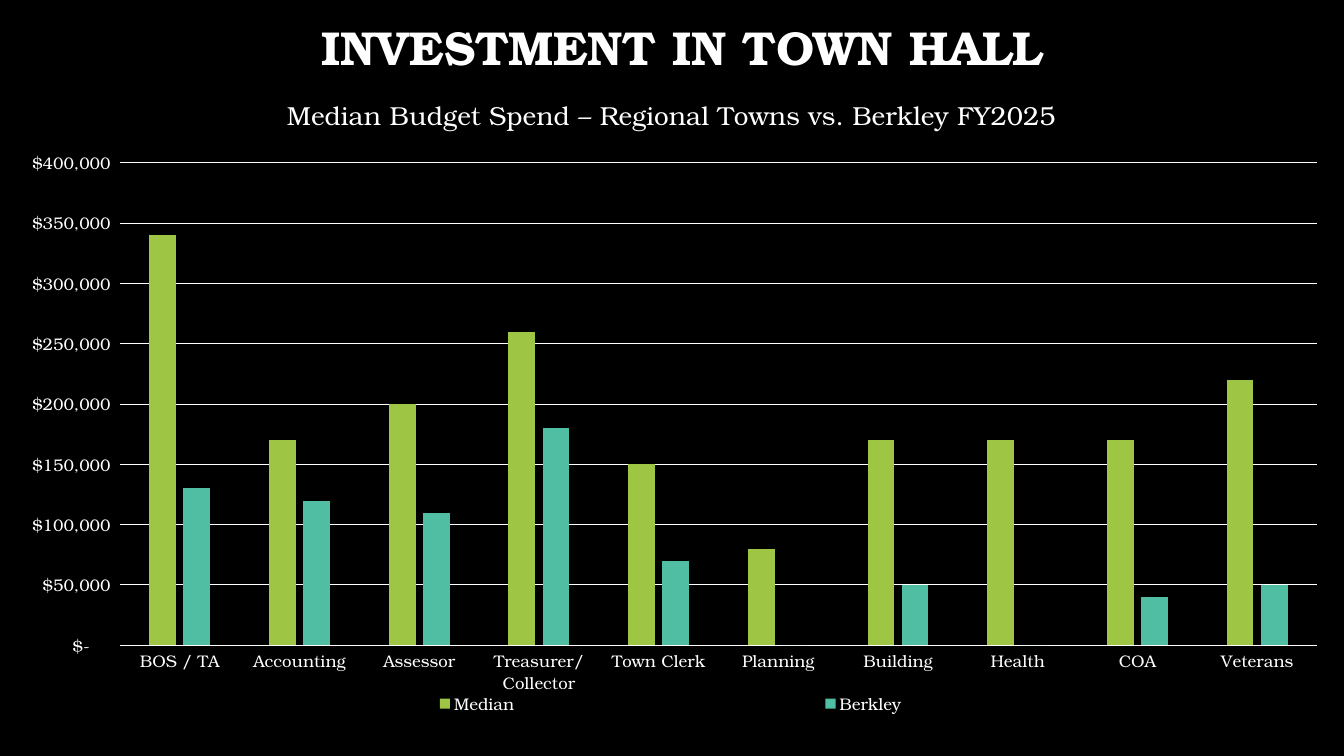
"""Build the town hall budget slide."""
from lxml.etree import SubElement
from pptx import Presentation
from pptx.chart.data import CategoryChartData
from pptx.dml.color import RGBColor
from pptx.enum.chart import XL_CHART_TYPE, XL_LEGEND_POSITION, XL_TICK_MARK
from pptx.enum.text import MSO_ANCHOR, PP_ALIGN
from pptx.oxml.ns import qn
from pptx.util import Inches, Pt

COLORS = {"back": "000000", "text": "FFFFFF", "Median": "9EC544", "Berkley": "50BEA3"}
FONT = "TeX Gyre Bonum"
MONEY = r'_("$"* #,##0_);_("$"* \(#,##0\);_("$"* "-"??_);_(@_)'
SPEND = [
    ("BOS / TA", 340000, 130000),
    ("Accounting", 170000, 120000),
    ("Assessor", 200000, 110000),
    ("Treasurer/Collector", 260000, 180000),
    ("Town Clerk", 150000, 70000),
    ("Planning", 80000, 0),
    ("Building", 170000, 50000),
    ("Health", 170000, 0),
    ("COA", 170000, 40000),
    ("Veterans", 220000, 50000),
]


class Deck:
    """Hold the style and the current slide, with lengths in percent."""

    def __init__(self):
        self.show = Presentation()
        self.show.slide_width = Inches(13.33)
        self.show.slide_height = Inches(7.5)
        self.slide = self.show.slides.add_slide(self.show.slide_layouts[5])
        self.paint(self.slide.background.fill, "back")

    def paint(self, fill, name):
        fill.solid()
        fill.fore_color.rgb = RGBColor.from_string(COLORS[name])

    def style(self, font, size, bold=False):
        font.name, font.size, font.bold = FONT, Pt(size), bold
        font.color.rgb = RGBColor.from_string(COLORS["text"])

    def rule(self, line):
        self.paint(line.fill, "text")
        line.width = Pt(0.75)

    def box(self, *share):
        sides = (self.show.slide_width, self.show.slide_height) * 2
        return [int(part * side / 100) for part, side in zip(share, sides)]

    def title(self, text, *share):
        shape = self.slide.shapes.title
        shape.left, shape.top, shape.width, shape.height = self.box(*share)
        frame = shape.text_frame
        frame.vertical_anchor = MSO_ANCHOR.MIDDLE
        para = frame.paragraphs[0]
        para.alignment, para.line_spacing = PP_ALIGN.CENTER, 0.9
        run = para.add_run()
        run.text = text
        self.style(run.font, 34, True)

    def chart(self, head, names, rows, *share):
        data = CategoryChartData(number_format=MONEY)
        cats, *sets = zip(*rows)
        data.categories = cats
        for name, vals in zip(names, sets):
            data.add_series(name, vals)
        frame = self.slide.shapes.add_chart(
            XL_CHART_TYPE.COLUMN_CLUSTERED, *self.box(*share), data)
        chart = frame.chart
        self.style(chart.font, 10)
        run = chart.chart_title.text_frame.paragraphs[0].add_run()
        run.text = head
        self.style(run.font, 18.6)
        self.bars(chart.plots[0])
        self.axes(chart)
        chart.has_legend = True
        chart.legend.position = XL_LEGEND_POSITION.BOTTOM
        chart.legend.include_in_layout = False
        self.style(chart.legend.font, 12)
        self.place(chart, "title", 1, x=21, y=2.36)
        self.place(chart, "plotArea", 0, x=8.93, y=13.3, w=89.07, h=72)
        self.place(chart, "legend", 1, x=10, y=91.5, w=79.8, h=5)

    def bars(self, plot):
        plot.gap_width, plot.overlap = 219, -27
        plot.vary_by_categories = False
        for series in plot.series:
            self.paint(series.format.fill, series.name)
            series.invert_if_negative = False

    def axes(self, chart):
        for axis in (chart.category_axis, chart.value_axis):
            axis.major_tick_mark = axis.minor_tick_mark = XL_TICK_MARK.NONE
            self.style(axis.tick_labels.font, 12)
        self.rule(chart.category_axis.format.line)
        value = chart.value_axis
        value.format.line.fill.background()
        value.minimum_scale, value.maximum_scale, value.major_unit = 0, 400000, 50000
        value.tick_labels.number_format = MONEY
        value.tick_labels.number_format_is_linked = False
        self.rule(value.major_gridlines.format.line)

    def place(self, chart, part, spot, **share):
        host = next(chart.element.iter(qn(f"c:{part}")))
        for old in host.findall(qn("c:layout")):
            host.remove(old)
        layout = SubElement(host, qn("c:layout"))
        host.insert(spot, layout)
        manual = SubElement(layout, qn("c:manualLayout"))
        modes = {"xMode": "edge", "yMode": "edge"}
        if part == "plotArea":
            modes = {"layoutTarget": "inner", **modes}
        sizes = {tag: str(val / 100) for tag, val in share.items()}
        for tag, val in {**modes, **sizes}.items():
            SubElement(manual, qn(f"c:{tag}")).set("val", val)

    def save(self):
        self.show.save("out.pptx")


def main():
    deck = Deck()
    deck.title("INVESTMENT IN TOWN HALL", 8.33, -3.07, 84.92, 19.33)
    deck.chart("Median Budget Spend – Regional Towns vs. Berkley FY2025",
               ("Median", "Berkley"), SPEND, 0, 9.73, 100, 88.67)
    deck.save()


if __name__ == "__main__":
    main()
